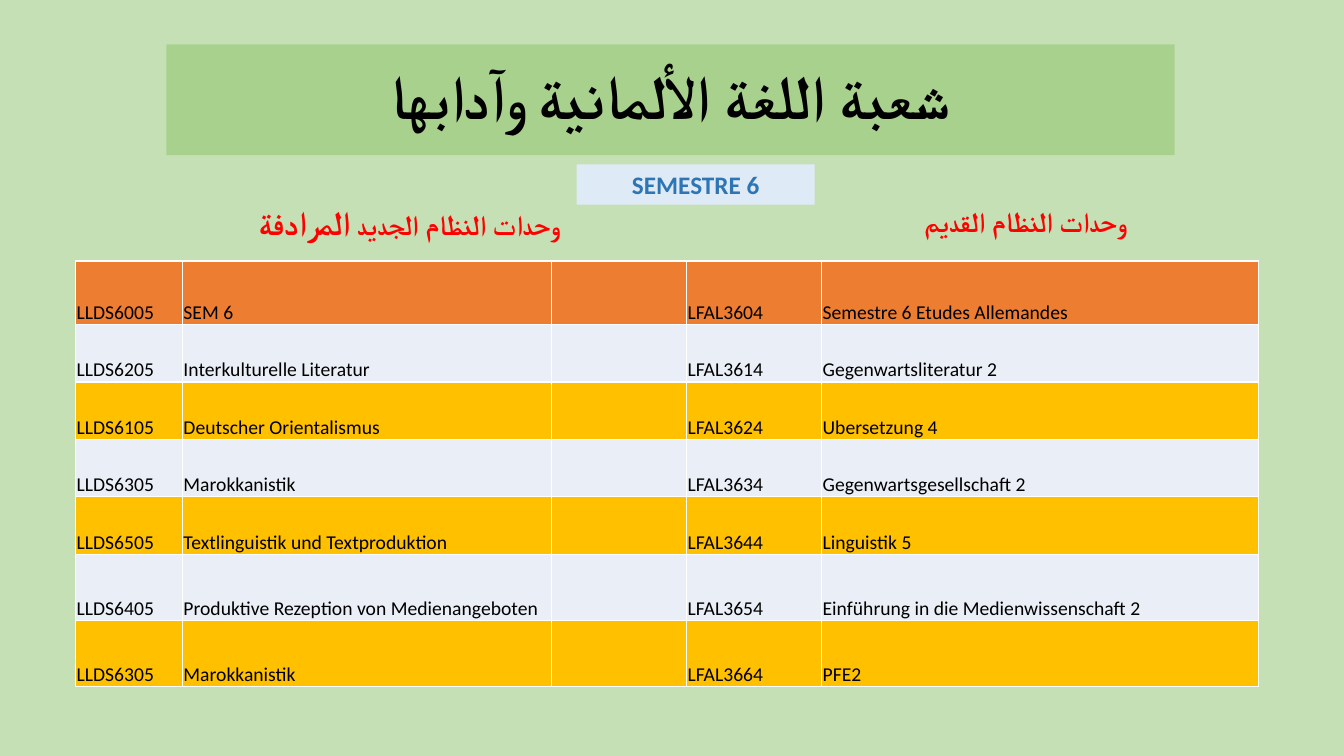
from lxml.etree import SubElement
from pptx import Presentation
from pptx.dml.color import RGBColor
from pptx.enum.shapes import MSO_SHAPE
from pptx.enum.text import MSO_ANCHOR, MSO_AUTO_SIZE, PP_ALIGN
from pptx.oxml.ns import qn
from pptx.util import Inches, Pt

FONT = "Calibri"
COLORS = {
    "background": "C5E0B4", "title": "A9D18E", "badge": "DEEBF7",
    "badge_text": "2E75B6", "heading": "FF0000", "text": "000000",
    "header": "ED7D31", "light": "EAEFF7", "gold": "FFC000", "border": "FFFFFF",
}
COLUMN_WIDTHS = [1.06, 3.66, 1.34, 1.34, 4.33]
ROW_HEIGHTS = [0.63, 0.57, 0.57, 0.57, 0.57, 0.66, 0.65]
MODULES = [
    ("LLDS6005", "SEM 6", "", "LFAL3604", "Semestre 6 Etudes Allemandes"),
    ("LLDS6205", "Interkulturelle Literatur", "", "LFAL3614", "Gegenwartsliteratur 2"),
    ("LLDS6105", "Deutscher Orientalismus", "", "LFAL3624", "Ubersetzung 4"),
    ("LLDS6305", "Marokkanistik", "", "LFAL3634", "Gegenwartsgesellschaft 2"),
    ("LLDS6505", "Textlinguistik und Textproduktion", "", "LFAL3644", "Linguistik 5"),
    ("LLDS6405", "Produktive Rezeption von Medienangeboten", "", "LFAL3654",
     "Einführung in die Medienwissenschaft 2"),
    ("LLDS6305", "Marokkanistik", "", "LFAL3664", "PFE2"),
]


def fill_solid(fill, color):
    fill.solid()
    fill.fore_color.rgb = RGBColor.from_string(COLORS[color])


def format_run(run, size, color, bold=False):
    run.font.size, run.font.bold, run.font.name = Pt(size), bold, FONT
    run.font.color.rgb = RGBColor.from_string(COLORS[color])
    SubElement(run.font._element, qn("a:cs"), typeface=FONT)


def set_right_to_left(paragraph):
    paragraph._p.get_or_add_pPr().set("rtl", "1")


def add_title(slide, box, text):
    title = slide.shapes.title
    title.left, title.top, title.width, title.height = map(Inches, box)
    fill_solid(title.fill, "title")
    frame = title.text_frame
    frame.text = text
    frame.auto_size = MSO_AUTO_SIZE.NONE
    frame.vertical_anchor = MSO_ANCHOR.MIDDLE
    paragraph = frame.paragraphs[0]
    paragraph.alignment, paragraph.line_spacing = PP_ALIGN.CENTER, 0.9
    set_right_to_left(paragraph)
    format_run(paragraph.runs[0], 44, "text", bold=True)


def add_heading(slide, box, parts):
    """Add a right-to-left heading from (text, size) parts."""
    frame = slide.shapes.add_textbox(*map(Inches, box)).text_frame
    frame.word_wrap = True
    paragraph = frame.paragraphs[0]
    paragraph.alignment = PP_ALIGN.CENTER
    set_right_to_left(paragraph)
    for text, size in parts:
        run = paragraph.add_run()
        run.text = text
        format_run(run, size, "heading", bold=True)


def add_semester_badge(slide, box, text):
    badge = slide.shapes.add_shape(MSO_SHAPE.RECTANGLE, *map(Inches, box))
    badge.shadow.inherit = False
    fill_solid(badge.fill, "badge")
    badge.line.fill.background()
    frame = badge.text_frame
    frame.text = text
    frame.vertical_anchor = MSO_ANCHOR.TOP
    frame.paragraphs[0].alignment = PP_ALIGN.CENTER
    format_run(frame.paragraphs[0].runs[0], 18, "badge_text", bold=True)


def format_cell(cell, text, color):
    properties = cell._tc.get_or_add_tcPr()
    for side in ("lnL", "lnR", "lnT", "lnB"):
        line = SubElement(properties, qn(f"a:{side}"), w=str(Pt(1)))
        line_fill = SubElement(line, qn("a:solidFill"))
        SubElement(line_fill, qn("a:srgbClr"), val=COLORS["border"])
    fill_solid(cell.fill, color)
    if text:
        cell.text = text
        cell.vertical_anchor = MSO_ANCHOR.BOTTOM
        cell.margin_left = cell.margin_right = cell.margin_top = Inches(0.01)
        cell.margin_bottom = 0
        format_run(cell.text_frame.paragraphs[0].runs[0], 14, "text")


def add_module_table(slide, left, top):
    table = slide.shapes.add_table(
        len(MODULES), len(COLUMN_WIDTHS), Inches(left), Inches(top),
        Inches(sum(COLUMN_WIDTHS)), Inches(sum(ROW_HEIGHTS))).table
    table.first_row = table.horz_banding = False
    for column, width in zip(table.columns, COLUMN_WIDTHS):
        column.width = Inches(width)
    for index, (row, height, module) in enumerate(zip(table.rows, ROW_HEIGHTS, MODULES)):
        row.height = Inches(height)
        color = "header" if index == 0 else "light" if index % 2 else "gold"
        for cell, text in zip(row.cells, module):
            format_cell(cell, text, color)


def main():
    presentation = Presentation()
    presentation.slide_width, presentation.slide_height = Inches(13.33), Inches(7.5)
    slide = presentation.slides.add_slide(presentation.slide_layouts[5])
    fill_solid(slide.background.fill, "background")
    add_title(slide, (1.65, 0.44, 10, 1.1), "شعبة اللغة الألمانية وآدابها")
    add_heading(slide, (1.83, 1.95, 4.46, 0.5),
                [("وحدات النظام الجديد ", 20), ("المرادفة", 24)])
    add_heading(slide, (7.94, 1.98, 4.46, 0.44), [("وحدات النظام القديم", 20)])
    add_semester_badge(slide, (5.72, 1.63, 2.36, 0.4), "SEMESTRE 6")
    add_module_table(slide, 0.75, 2.59)
    presentation.save("out.pptx")


if __name__ == "__main__":
    main()
